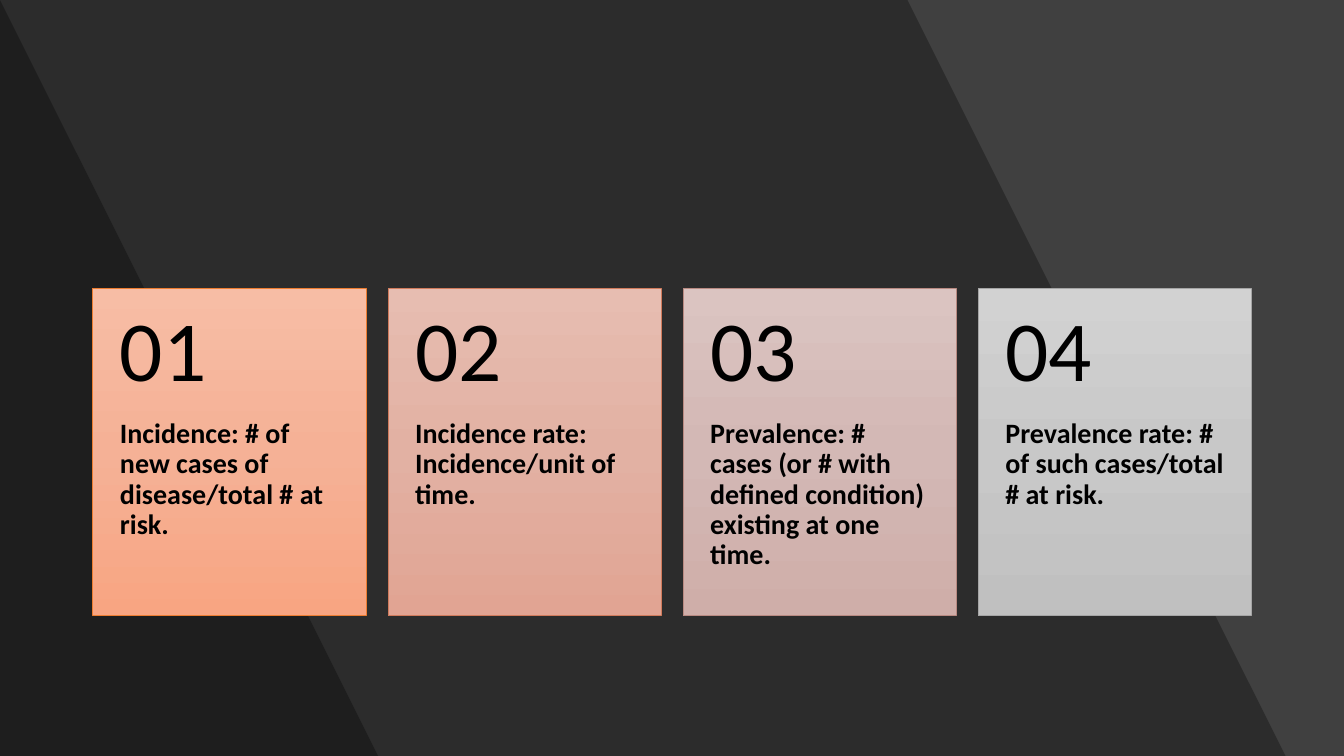
from copy import deepcopy

from lxml import etree
from pptx import Presentation
from pptx.dml.color import RGBColor
from pptx.enum import shapes, text
from pptx.oxml.ns import qn
from pptx.util import Inches, Pt

CARDS = [
    ("01", "Incidence: # of new cases of disease/total # at risk."),
    ("02", "Incidence rate: Incidence/unit of time."),
    ("03", "Prevalence: # cases (or # with defined condition) existing at one time."),
    ("04", "Prevalence rate: # of such cases/total # at risk."),
]
# three gradient stops, then the outline
TONES = {
    "01": ("F7BDA5", "F5B196", "F8A582", "ED7D31"),
    "02": ("E7BDB1", "E2B1A3", "E1A493", "D17B5C"),
    "03": ("DBC4C1", "D3B8B5", "CFAEA9", "B98A82"),
    "04": ("D2D2D2", "C8C8C8", "C0C0C0", "A5A5A5"),
}
COLORS = {"back": "404040", "shade": "000000", "text": "000000"}
SHADES = [(9.42, 12.89), (0.44, 3.92)]  # top and bottom right corners
WIDE, HIGH = 13.33, 7.5
LEFT, TOP, STEP = 0.92, 2.86, 2.927
CARD_W, CARD_H, HEAD_H = 2.71, 3.25, 1.3
PAD = 0.27


def rgb(name):
    return RGBColor.from_string(COLORS.get(name, name))


def add_shade(slide, top, base):
    """Draw a translucent slanted panel from the left edge."""
    pen = slide.shapes.build_freeform(0, 0, scale=Inches(1))
    pen.add_line_segments([(top, 0), (base, HIGH), (0, HIGH)], close=True)
    panel = pen.convert_to_shape()
    panel.shadow.inherit = False
    panel.line.fill.background()
    panel.fill.solid()
    panel.fill.fore_color.rgb = rgb("shade")
    tint = panel._element.spPr.find(".//" + qn("a:srgbClr"))
    etree.SubElement(tint, qn("a:alpha")).set("val", "30000")


def add_label(group, words, x, y, high, size, bold, anchor, pads):
    box = group.shapes.add_textbox(Inches(x), Inches(y), Inches(CARD_W), Inches(high))
    frame = box.text_frame
    frame.word_wrap = True
    frame.vertical_anchor = anchor
    frame.margin_left = frame.margin_right = Inches(PAD)
    frame.margin_top, frame.margin_bottom = map(Inches, pads)
    line = frame.paragraphs[0]
    line.text = words
    line.line_spacing = 0.9
    font = line.font
    font.name, font.size, font.bold = "Calibri", Pt(size), bold
    font.color.rgb = rgb("text")


def add_card(group, x, number, words):
    card = group.shapes.add_shape(
        shapes.MSO_SHAPE.RECTANGLE,
        Inches(x), Inches(TOP), Inches(CARD_W), Inches(CARD_H))
    card.shadow.inherit = False
    *tones, edge = TONES[number]
    card.line.color.rgb = rgb(edge)
    card.line.width = Pt(0.5)
    card.fill.gradient()
    card.fill.gradient_angle = 270
    first = card._element.spPr.find(".//" + qn("a:gs"))
    first.addnext(deepcopy(first))
    for stop, tone, place in zip(card.fill.gradient_stops, tones, (0, 0.5, 1)):
        stop.color.rgb = rgb(tone)
        stop.position = place
    add_label(group, words, x, TOP + HEAD_H, CARD_H - HEAD_H, 20, True,
              text.MSO_ANCHOR.TOP, (0, 0.36))
    add_label(group, number, x, TOP, HEAD_H, 61, False,
              text.MSO_ANCHOR.MIDDLE, (0.18, 0.18))


def main():
    deck = Presentation()
    deck.slide_width, deck.slide_height = Inches(WIDE), Inches(HIGH)
    slide = deck.slides.add_slide(deck.slide_layouts[6])
    slide.background.fill.solid()
    slide.background.fill.fore_color.rgb = rgb("back")
    for top, base in SHADES:
        add_shade(slide, top, base)
    group = slide.shapes.add_group_shape()
    for i, (number, words) in enumerate(CARDS):
        add_card(group, LEFT + i * STEP, number, words)
    deck.save("out.pptx")


if __name__ == "__main__":
    main()
